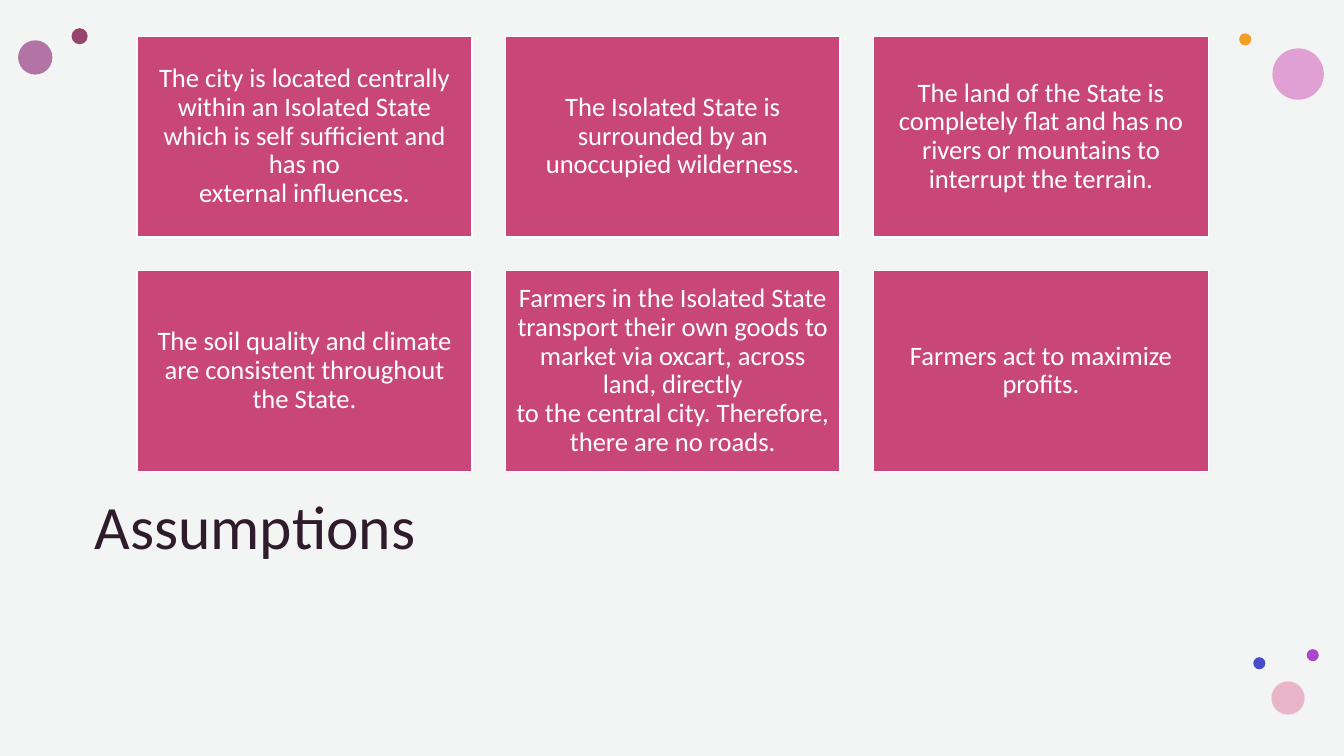
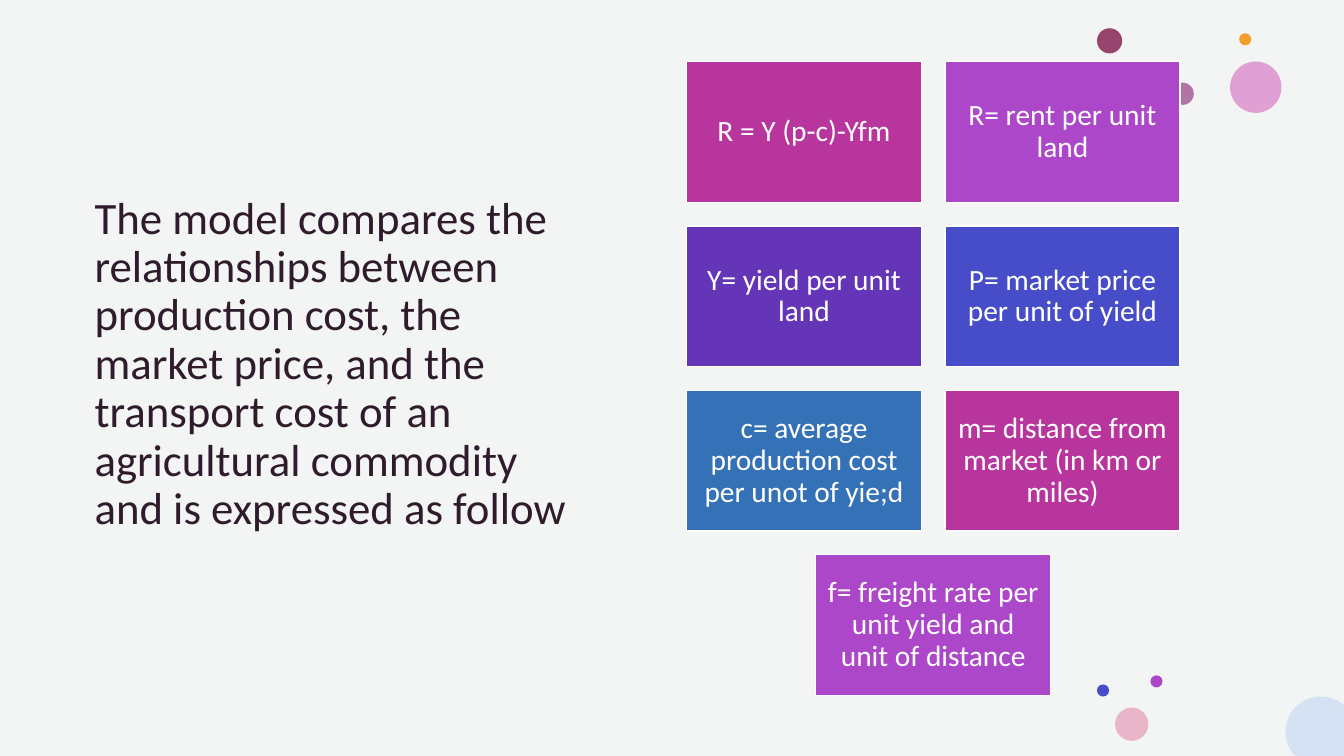
from math import cos, pi, sin

from lxml import etree
from pptx import Presentation
from pptx.dml.color import RGBColor
from pptx.enum.shapes import MSO_SHAPE
from pptx.enum.text import MSO_ANCHOR, PP_ALIGN
from pptx.oxml.ns import qn
from pptx.util import Inches, Pt

RECTANGLE, OVAL = MSO_SHAPE.RECTANGLE, MSO_SHAPE.OVAL
TOP, MIDDLE = MSO_ANCHOR.TOP, MSO_ANCHOR.MIDDLE
LEFT, CENTER = PP_ALIGN.LEFT, PP_ALIGN.CENTER

SLIDE_WIDTH, SLIDE_HEIGHT = 13.33, 7.5
FONT = "Calibri"
BACKGROUND, TITLE_COLOR, WHITE = "F2F5F4", "301B2C", "FFFFFF"
ROSE, MAGENTA, ORCHID = "C94778", "B7359D", "AD47C9"
VIOLET, INDIGO, BLUE = "6535B7", "474DC9", "3571B7"
PALE_BLUE = "D5E2F3"
DOT_STYLES = [("97446E", 100), ("DA80C8", 72), ("F39E29", 100), ("B174A5", 100),
              (ORCHID, 100), ("E9B5C9", 100), (INDIGO, 100)]

ASSUMPTIONS = [
    "The city is located centrally within an Isolated State which is self sufficient "
    "and has no\nexternal influences.",
    "The Isolated State is surrounded by an unoccupied wilderness.",
    "The land of the State is completely flat and has no rivers or mountains to "
    "interrupt the terrain.",
    "The soil quality and climate are consistent throughout the State.",
    "Farmers in the Isolated State transport their own goods to market via oxcart, "
    "across land, directly\nto the central city. Therefore, there are no roads.",
    "Farmers act to maximize profits.",
]
FORMULA_TERMS = [
    ("R = Y (p-c)-Yfm", MAGENTA),
    ("R= rent per unit land", ORCHID),
    ("Y= yield per unit land", VIOLET),
    ("P= market price per unit of yield", INDIGO),
    ("c= average production cost per unot of yie;d", BLUE),
    ("m= distance from market (in km or miles)", MAGENTA),
    ("f= freight rate per unit yield and unit of distance", ORCHID),
]
ASSUMPTION_DOTS = [(0.71, 0.28, 0.16), (12.62, 0.48, 0.51), (12.29, 0.33, 0.12),
                   (0.18, 0.4, 0.34), (12.96, 6.44, 0.12), (12.61, 6.76, 0.33),
                   (12.43, 6.52, 0.12)]
FORMULA_DOTS = [(10.88, 0.28, 0.25), (12.2, 0.61, 0.51), (12.29, 0.33, 0.12),
                (11.62, 0.82, 0.22), (11.41, 6.7, 0.12), (11.06, 7.02, 0.33),
                (10.88, 6.79, 0.12)]


def rgb(color):
    return RGBColor.from_string(color)


def paint(shape, color, opacity=100):
    shape.shadow.inherit = False
    shape.fill.solid()
    shape.fill.fore_color.rgb = rgb(color)
    shape.line.fill.background()
    if opacity < 100:
        fill = shape.fill._xPr.find(qn("a:solidFill"))
        etree.SubElement(fill[0], qn("a:alpha"), val=str(opacity * 1000))


def write(shape, text, size, color, align, anchor):
    frame = shape.text_frame
    frame.word_wrap = True
    frame.vertical_anchor = anchor
    paragraph = frame.paragraphs[0]
    paragraph.text = text
    paragraph.alignment = align
    paragraph.line_spacing = 0.9
    for run in paragraph.runs:
        run.font.name = FONT
        run.font.size = Pt(size)
        run.font.color.rgb = rgb(color)


def new_slide(deck):
    slide = deck.slides.add_slide(deck.slide_layouts[6])
    slide.background.fill.solid()
    slide.background.fill.fore_color.rgb = rgb(BACKGROUND)
    return slide


def add_title(slide, text, left, top, width, height, size, anchor):
    title = slide.shapes.add_textbox(Inches(left), Inches(top),
                                     Inches(width), Inches(height))
    write(title, text, size, TITLE_COLOR, LEFT, anchor)


def add_dots(slide, dots):
    for (left, top, diameter), (color, opacity) in zip(dots, DOT_STYLES):
        dot = slide.shapes.add_shape(OVAL, Inches(left), Inches(top),
                                     Inches(diameter), Inches(diameter))
        paint(dot, color, opacity)


def add_corner_dot(slide, center_x, center_y, radius, steps=72):
    angles = [2 * pi * step / steps for step in range(steps)]
    outline = [(Inches(min(center_x + radius * cos(angle), SLIDE_WIDTH)),
                Inches(min(center_y + radius * sin(angle), SLIDE_HEIGHT)))
               for angle in angles]
    builder = slide.shapes.build_freeform(*outline[0])
    builder.add_line_segments(outline[1:], close=True)
    paint(builder.convert_to_shape(), PALE_BLUE)


def add_card(slide, text, color, left, top, width, height, size, inset):
    card = slide.shapes.add_shape(RECTANGLE, Inches(left), Inches(top),
                                  Inches(width), Inches(height))
    paint(card, color)
    card.line.color.rgb = rgb(WHITE)
    card.line.width = Pt(1)
    frame = card.text_frame
    frame.margin_left = frame.margin_right = Inches(inset)
    frame.margin_top = frame.margin_bottom = Inches(inset)
    write(card, text, size, WHITE, CENTER, MIDDLE)


def add_card_grid(slide, cards, columns, left, top, width, size, inset):
    height, gap = 0.6 * width, 0.1 * width
    for index, (text, color) in enumerate(cards):
        row, column = divmod(index, columns)
        empty_cells = max(0, (row + 1) * columns - len(cards))
        x = left + (column + empty_cells / 2) * (width + gap)
        y = top + row * (height + gap)
        add_card(slide, text, color, x, y, width, height, size, inset)


def build_assumptions(deck):
    slide = new_slide(deck)
    add_dots(slide, ASSUMPTION_DOTS)
    add_title(slide, "Assumptions", 0.84, 4.87, 11.78, 1.97, 44, TOP)
    cards = [(text, ROSE) for text in ASSUMPTIONS]
    add_card_grid(slide, cards, 3, 1.36, 0.36, 3.32, 19, 0.08)


def build_formula(deck):
    slide = new_slide(deck)
    add_title(slide, "The model compares the relationships between production cost, "
              "the market price, and the transport cost of an agricultural commodity "
              "and is expressed as follow", 0.84, 1.04, 5.04, 5.16, 32, MIDDLE)
    add_dots(slide, FORMULA_DOTS)
    add_corner_dot(slide, 13.1, 7.26, 0.35)
    add_card_grid(slide, FORMULA_TERMS, 2, 6.81, 0.61, 2.33, 21, 0.09)


def main():
    deck = Presentation()
    deck.slide_width = Inches(SLIDE_WIDTH)
    deck.slide_height = Inches(SLIDE_HEIGHT)
    build_assumptions(deck)
    build_formula(deck)
    deck.save("out.pptx")


if __name__ == "__main__":
    main()
